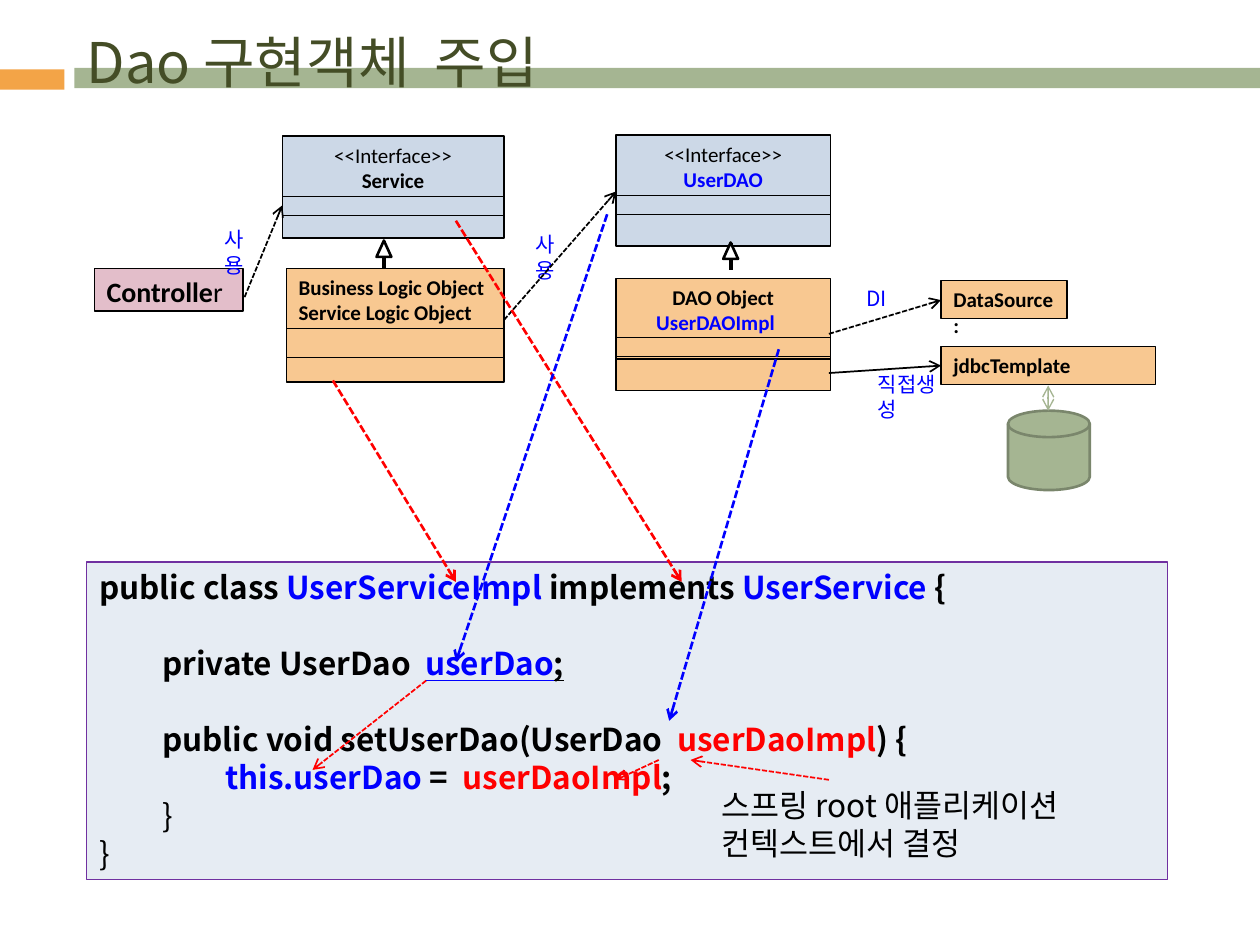
from typing import NamedTuple

from lxml import etree
from pptx import Presentation
from pptx.dml.color import RGBColor
from pptx.enum.dml import MSO_LINE
from pptx.enum.shapes import MSO_CONNECTOR, MSO_SHAPE
from pptx.enum.text import MSO_ANCHOR, PP_ALIGN
from pptx.oxml.ns import qn
from pptx.util import Cm, Pt

RECT, TRIANGLE = MSO_SHAPE.RECTANGLE, MSO_SHAPE.ISOSCELES_TRIANGLE
DISK = MSO_SHAPE.FLOWCHART_MAGNETIC_DISK
STRAIGHT, DASH = MSO_CONNECTOR.STRAIGHT, MSO_LINE.SQUARE_DOT
LEFT, CENTER = PP_ALIGN.LEFT, PP_ALIGN.CENTER
TOP, MIDDLE = MSO_ANCHOR.TOP, MSO_ANCHOR.MIDDLE
LATIN, KOREAN = "Calibri", "Noto Sans CJK KR"
COLORS = {
    "black": "000000", "white": "FFFFFF", "blue": "0000FF", "red": "FF0000",
    "green": "A5B592", "dark green": "7A866C", "olive": "444D26",
    "orange": "F3A447", "peach": "F8C891", "steel": "CCD8E7",
    "pink": "E3BECA", "code": "E6ECF3", "purple": "7030A0",
}


class Span(NamedTuple):
    text: str
    color: str = "black"
    bold: bool = False
    underline: bool = False
    font: str = LATIN


class Para(NamedTuple):
    spans: list[Span]
    align: PP_ALIGN = LEFT
    indent: float = 0
    before: float = 0  # points


class Area(NamedTuple):
    left: float
    top: float
    width: float
    height: float


class ClassBox(NamedTuple):
    area: Area
    fill: str
    paras: list[Para]
    size: float = 12
    bands: tuple = ()  # (top, height) of each compartment


class Arrow(NamedTuple):
    start: tuple[float, float]
    end: tuple[float, float]
    color: str = "black"
    width: float = 1
    dashed: bool = True
    heads: tuple = ("tailEnd",)


def rgb(name: str) -> RGBColor:
    return RGBColor.from_string(COLORS[name])


def write(box, paras: list[Para], size: float, wrap=True, anchor=TOP, pitch=None) -> None:
    frame = box.text_frame
    frame.word_wrap = wrap
    frame.vertical_anchor = anchor
    for index, item in enumerate(paras):
        para = frame.add_paragraph() if index else frame.paragraphs[0]
        para.alignment = item.align
        para.space_before = Pt(item.before)
        if pitch:
            para.line_spacing = Pt(pitch)
        if item.indent:
            para._p.get_or_add_pPr().set("marL", str(Cm(item.indent)))
        for part in item.spans:
            span = para.add_run()
            span.text = part.text
            font = span.font
            font.name, font.size = part.font, Pt(size)
            font.bold, font.underline = part.bold, part.underline
            font.color.rgb = rgb(part.color)
            east = etree.SubElement(span._r.get_or_add_rPr(), qn("a:ea"))
            east.set("typeface", KOREAN)


def add_box(page, area: Area, fill: str, line=None, width=0.75, kind=RECT):
    box = page.shapes.add_shape(kind, *map(Cm, area))
    box.shadow.inherit = False
    box.fill.solid()
    box.fill.fore_color.rgb = rgb(fill)
    if line:
        box.line.color.rgb = rgb(line)
        box.line.width = Pt(width)
    else:
        box.line.fill.background()
    return box


def add_class(page, item: ClassBox) -> None:
    box = add_box(page, item.area, item.fill, "black")
    write(box, item.paras, item.size)
    for top, height in item.bands:
        add_box(page, item.area._replace(top=top, height=height), item.fill, "black")


def add_text(page, area: Area, paras: list[Para], size: float, **options) -> None:
    write(page.shapes.add_textbox(*map(Cm, area)), paras, size, **options)


def add_arrow(page, item: Arrow) -> None:
    arrow = page.shapes.add_connector(STRAIGHT, *map(Cm, item.start + item.end))
    arrow.line.color.rgb = rgb(item.color)
    arrow.line.width = Pt(item.width)
    if item.dashed:
        arrow.line.dash_style = DASH
    outline = arrow.line._get_or_add_ln()
    for head in item.heads:
        etree.SubElement(outline, qn("a:" + head)).set("type", "arrow")
    etree.SubElement(arrow._element.spPr, qn("a:effectLst"))


def add_inheritance(page, center: float, top: float) -> None:
    add_arrow(page, Arrow((center, top), (center, top + 0.61), width=2.25, heads=()))
    add_box(page, Area(center - 0.15, top, 0.3, 0.33), "white", "black", 1.5, TRIANGLE)


def code(text: str, color="black", bold=True, underline=False) -> Span:
    return Span(text, color, bold, underline, KOREAN)


def bold_line(text: str, color="black", align=LEFT, indent=0.0) -> Para:
    return Para([Span(text, color, True)], align, indent)


STEREOTYPE = Para([Span("<<Interface>>")], CENTER)
CLASSES = [
    ClassBox(Area(5.77, 5.41, 4.39, 2.06), "peach",
             [bold_line("Business Logic Object"), bold_line("Service Logic Object")],
             bands=((7.04, 0.66), (6.63, 0.58))),
    ClassBox(Area(1.9, 5.41, 3, 0.86), "pink",
             [Para([Span("Controlle", bold=True), Span("r")])], 16),
    ClassBox(Area(12.42, 5.61, 4.32, 2.24), "peach",
             [bold_line("DAO Object", align=CENTER),
              bold_line("UserDAOImpl", "blue", indent=0.56)],
             bands=((7.24, 0.64), (6.81, 0.38))),
    ClassBox(Area(18.97, 5.66, 2.54, 0.76), "peach", [bold_line("DataSource:")]),
    ClassBox(Area(18.97, 6.99, 4.32, 0.76), "peach", [bold_line("jdbcTemplate")]),
    ClassBox(Area(12.42, 2.72, 4.32, 2.24), "steel",
             [STEREOTYPE, bold_line("UserDAO", "blue", CENTER)], bands=((3.94, 0.38),)),
    ClassBox(Area(5.69, 2.74, 4.47, 2.06), "steel",
             [STEREOTYPE, bold_line("Service", align=CENTER)], bands=((3.96, 0.38),)),
]
ARROWS = [
    # Uses between classes
    Arrow((10.16, 6.45), (12.42, 3.86)),
    Arrow((16.71, 6.73), (18.97, 6.05)),
    Arrow((16.71, 7.52), (18.97, 7.37), dashed=False),
    Arrow((21.13, 7.77), (21.13, 8.28), "green", 0.79, False, ("headEnd", "tailEnd")),
    Arrow((4.93, 5.99), (5.69, 4.14)),
    # From the diagram into the code
    Arrow((6.71, 7.67), (9.19, 11.73), "red", 1.5),
    Arrow((9.19, 4.45), (13.74, 11.73), "red", 1.5),
    Arrow((12.24, 4.32), (9.19, 13.34), "blue", 1.5),
    Arrow((15.7, 7.04), (13.49, 14.53), "blue", 1.5),
    # Within the code
    Arrow((8.59, 13.72), (6.3, 15.52), "red"),
    Arrow((13.28, 15.32), (12.42, 15.72), "red"),
    Arrow((16.71, 15.72), (13.92, 15.32), "red"),
]
LABELS = [
    ("사용", Area(10.54, 4.55, 1.27, 0.71), False),
    ("DI", Area(17.22, 5.64, 1.02, 0.71), False),
    ("직접생성", Area(17.45, 7.37, 1.85, 0.71), True),
    ("사용", Area(4.27, 4.45, 1.27, 0.71), False),
]
PITCH, TAB = 21.7, 1.27
CODE = [
    Para([code("public class "), code("UserServiceImpl ", "blue"), code("implements "),
          code("UserService", "blue"), code(" {")]),
    Para([code("private UserDao  "), code("userDao", "blue", underline=True),
          code(";", underline=True)], indent=TAB, before=PITCH),
    Para([code("public void setUserDao(UserDao  "), code("userDaoImpl", "red"),
          code(") {")], indent=TAB, before=PITCH),
    Para([code("this.userDao ", "blue"), code("=  "), code("userDaoImpl", "red"),
          code(";")], indent=2 * TAB),
    Para([code("}", bold=False)], indent=TAB),
    Para([code("}", bold=False)]),
]
NOTE = [Para([Span("스프링 "), Span("root ", font=KOREAN),
              Span("애플리케이션  컨텍스트에서 결정")])]


def main() -> None:
    deck = Presentation()
    deck.slide_width, deck.slide_height = Cm(25.4), Cm(19.05)
    page = deck.slides.add_slide(deck.slide_layouts[6])

    # Title band and title
    add_box(page, Area(1.5, 1.37, 23.9, 0.41), "green")
    add_box(page, Area(0, 1.4, 1.3, 0.41), "orange")
    title = [Para([Span("Dao 구현객체  주입", "olive", font=KOREAN)])]
    add_text(page, Area(1.5, 0.33, 22.65, 1.8), title, 32, anchor=MIDDLE)

    # Code panel
    panel = add_box(page, Area(1.75, 11.33, 21.79, 6.4), "code", "purple")
    write(panel, CODE, 18, pitch=PITCH)

    # Class diagram
    for item in CLASSES:
        add_class(page, item)
    for center, top in ((7.74, 4.85), (14.73, 4.89)):
        add_inheritance(page, center, top)
    add_box(page, Area(20.32, 8.28, 1.65, 1.6), "green", "dark green", 1.5, DISK)
    for text, area, wrap in LABELS:
        label = [Para([Span(text, "blue", font=KOREAN)])]
        add_text(page, area, label, 12, wrap=wrap, pitch=14.4)

    # Arrows and note
    for arrow in ARROWS:
        add_arrow(page, arrow)
    add_text(page, Area(14.3, 15.72, 8.99, 1.02), NOTE, 18, pitch=PITCH)
    deck.save("out.pptx")


if __name__ == "__main__":
    main()
